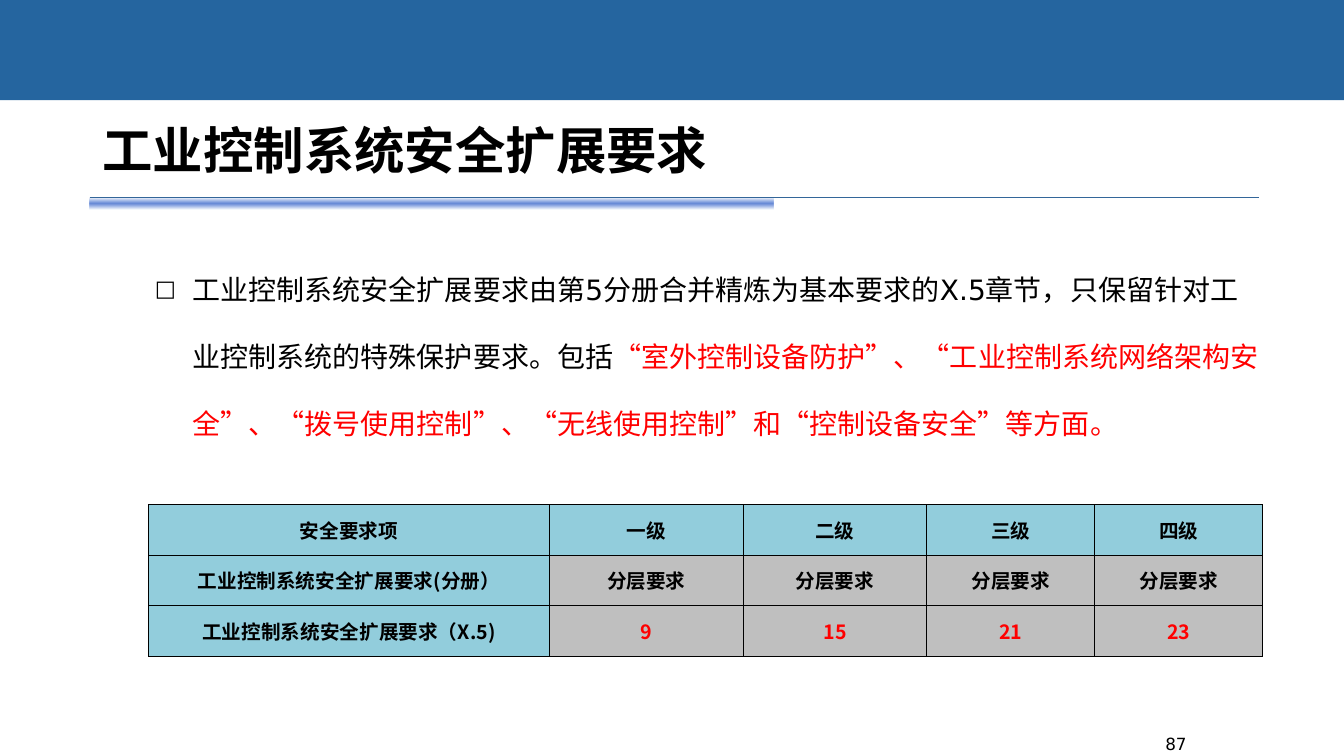
from lxml.etree import SubElement
from pptx import Presentation
from pptx.dml.color import RGBColor
from pptx.enum.shapes import MSO_CONNECTOR, MSO_SHAPE
from pptx.enum.text import MSO_ANCHOR, PP_ALIGN
from pptx.oxml import parse_xml
from pptx.oxml.ns import nsdecls, qn
from pptx.util import Pt

LATIN, CJK = "DejaVu Sans", "Noto Sans CJK SC"
TITLE = "工业控制系统安全扩展要求"
BODY = [
    ("工业控制系统安全扩展要求由第5分册合并精炼为基本要求的X.5章节，只保留针对工业控制系统的特殊保护要求。包括", "000000"),
    ("“室外控制设备防护”、“工业控制系统网络架构安全”、“拨号使用控制”、“无线使用控制”和“控制设备安全”等方面。", "FF0000"),
]
ROWS = [
    ["安全要求项", "一级", "二级", "三级", "四级"],
    ["工业控制系统安全扩展要求(分册）"] + ["分层要求"] * 4,
    ["工业控制系统安全扩展要求（X.5)", "9", "15", "21", "23"],
]
COLUMN_WIDTHS = [286.5, 138.5, 131, 120, 120]


def color(value):
    """Return the colour for a hex string."""
    return RGBColor.from_string(value)


def apply(target, values):
    """Set attributes of an object from a dict."""
    for name, value in values.items():
        setattr(target, name, value)


def add_span(para, text, size, fill, bold=False, font=LATIN):
    """Append formatted text to a paragraph."""
    span = para.add_run()
    span.text = text
    apply(span.font, {"size": Pt(size), "bold": bold, "name": font})
    span.font.color.rgb = color(fill)
    SubElement(span.font._element, qn("a:ea"), typeface=CJK)


def add_banner(page, left, top, width, height):
    """Draw the solid band across the top."""
    band = page.shapes.add_shape(MSO_SHAPE.RECTANGLE, left, top, width, height)
    band.shadow.inherit = False
    band.fill.solid()
    band.fill.fore_color.rgb = color("25659F")
    band.line.fill.background()


def add_rule(page, left, top, width, height):
    """Draw the thin rule and the fading strip under its first part."""
    strip = page.shapes.add_shape(MSO_SHAPE.RECTANGLE, left, top, int(width * 0.585), height)
    strip.shadow.inherit = False
    strip.line.fill.background()
    stops = "".join(
        f'<a:gs pos="{position}"><a:srgbClr val="{value}"><a:alpha val="{alpha}"/></a:srgbClr></a:gs>'
        for position, value, alpha in [(0, "5781D5", 0), (50000, "6387D6", 100000), (100000, "5781D5", 0)]
    )
    gradient = parse_xml(
        f'<a:gradFill {nsdecls("a")} rotWithShape="1"><a:gsLst>{stops}</a:gsLst>'
        '<a:lin ang="5400000" scaled="0"/></a:gradFill>'
    )
    strip._element.spPr.find(qn("a:prstGeom")).addnext(gradient)
    rule = page.shapes.add_connector(MSO_CONNECTOR.STRAIGHT, left, top, left + width, top)
    rule.line.width = Pt(0.75)
    rule.line.color.rgb = color("336699")
    SubElement(rule._element.spPr, qn("a:effectLst"))


def add_title(page, left, top, width, height):
    """Place and fill the title placeholder."""
    title = page.shapes.title
    apply(title, {"left": left, "top": top, "width": width, "height": height})
    apply(title.text_frame, {"vertical_anchor": MSO_ANCHOR.BOTTOM, "word_wrap": True})
    para = title.text_frame.paragraphs[0]
    para.alignment = PP_ALIGN.LEFT
    add_span(para, TITLE, 36, "000000", bold=True)


def add_body(page, left, top, width, height):
    """Add the bulleted explanation."""
    box = page.shapes.add_textbox(left, top, width, height)
    box.text_frame.word_wrap = True
    para = box.text_frame.paragraphs[0]
    para.line_spacing = 2.0
    properties = para._p.get_or_add_pPr()
    properties.set("marL", str(Pt(34)))
    properties.set("indent", str(-Pt(27)))
    SubElement(properties, qn("a:buSzPct"), val="80000")
    SubElement(properties, qn("a:buFont"), typeface=LATIN)
    SubElement(properties, qn("a:buChar"), char="□")
    for text, fill in BODY:
        add_span(para, text, 20, fill)


def add_borders(cell):
    """Give a cell thin black borders, placed ahead of its fill."""
    properties = cell._tc.get_or_add_tcPr()
    for index, side in enumerate(["lnL", "lnR", "lnT", "lnB"]):
        border = parse_xml(
            f'<a:{side} {nsdecls("a")} w="{Pt(0.5)}"><a:solidFill>'
            f'<a:srgbClr val="000000"/></a:solidFill></a:{side}>'
        )
        properties.insert(index, border)


def add_level_table(page, left, top, width, height):
    """Add the table of requirement counts by level."""
    frame = page.shapes.add_table(len(ROWS), len(COLUMN_WIDTHS), left, top, width, height)
    table = frame.table
    for column, column_width in zip(table.columns, COLUMN_WIDTHS):
        column.width = Pt(column_width)
    for row_index, texts in enumerate(ROWS):
        for column_index, text in enumerate(texts):
            cell = table.cell(row_index, column_index)
            apply(cell, {"margin_left": 0, "margin_right": 0, "margin_top": 0,
                         "margin_bottom": 0, "vertical_anchor": MSO_ANCHOR.MIDDLE})
            heading = row_index == 0 or column_index == 0
            cell.fill.solid()
            cell.fill.fore_color.rgb = color("92CDDC" if heading else "BFBFBF")
            add_borders(cell)
            para = cell.text_frame.paragraphs[0]
            para.alignment = PP_ALIGN.CENTER
            add_span(para, text, 14, "FF0000" if text.isdigit() else "000000", bold=True, font=CJK)


def add_page_number(page, left, top, width, height):
    """Add the page number."""
    box = page.shapes.add_textbox(left, top, width, height)
    box.text_frame.word_wrap = True
    para = box.text_frame.paragraphs[0]
    para.alignment = PP_ALIGN.CENTER
    add_span(para, "87", 12, "000000")


def main():
    """Build and save the deck."""
    deck = Presentation()
    apply(deck, {"slide_width": Pt(960), "slide_height": Pt(540)})
    page = deck.slides.add_slide(deck.slide_layouts[5])
    add_rule(page, Pt(64), Pt(141), Pt(835), Pt(9))
    add_banner(page, 0, 0, deck.slide_width, Pt(71.5))
    add_page_number(page, Pt(736), Pt(520.5), Pt(208), Pt(19.5))
    add_title(page, Pt(66), Pt(36), Pt(732), Pt(96))
    add_body(page, Pt(96.5), Pt(167), Pt(815), Pt(157))
    add_level_table(page, Pt(106), Pt(360.5), Pt(796), Pt(108))
    deck.save("out.pptx")


if __name__ == "__main__":
    main()
